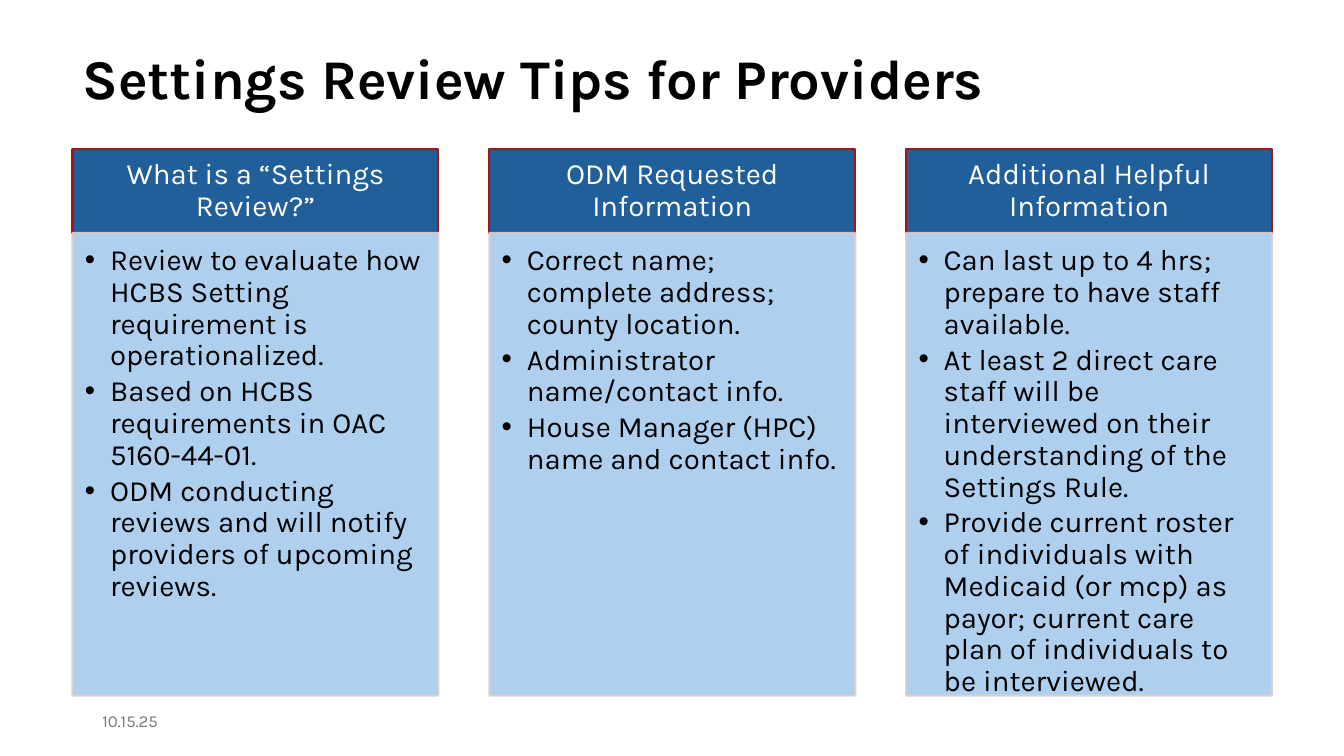
from dataclasses import dataclass

from lxml import etree
from pptx import Presentation
from pptx.dml.color import RGBColor
from pptx.enum import shapes, text
from pptx.oxml import ns
from pptx.util import Pt

FONT = "Karla"
COLOURS = {
    "header": "215F9A",
    "header_line": "991A1E",
    "body": "A6CAEC",
    "body_line": "DECDCD",
    "white": "FFFFFF",
    "black": "000000",
    "date": "797979",
}

# Column grid, in points
LEFT, TOP = 51.84, 106.56
COLUMN_WIDTH, COLUMN_PITCH = 261.36, 297.72
HEADER_HEIGHT, BODY_HEIGHT = 59.76, 330.48
INDENT = 18


@dataclass
class Column:
    heading: str
    tips: list[str]


COLUMNS = [
    Column("What is a “Settings Review?”", [
        "Review to evaluate how HCBS Setting requirement is operationalized.",
        "Based on HCBS requirements in OAC 5160-44-01.",
        "ODM conducting reviews and will notify providers of upcoming reviews.",
    ]),
    Column("ODM Requested Information", [
        "Correct name; complete address; county location.",
        "Administrator name/contact info.",
        "House Manager (HPC) name and contact info.",
    ]),
    Column("Additional Helpful Information", [
        "Can last up to 4 hrs; prepare to have staff available.",
        "At least 2 direct care staff will be interviewed on their "
        "understanding of the Settings Rule.",
        "Provide current roster of individuals with Medicaid (or mcp) as payor; "
        "current care plan of individuals to be interviewed.",
    ]),
]


def colour(name: str) -> RGBColor:
    return RGBColor.from_string(COLOURS[name])


def set_font(paragraph, size: float, name: str, bold: bool = False) -> None:
    font = paragraph.font
    font.name, font.size, font.bold = FONT, Pt(size), bold
    font.color.rgb = colour(name)


def set_frame(frame, anchor, margins: tuple[float, float, float, float]) -> None:
    frame.word_wrap = True
    frame.vertical_anchor = anchor
    (frame.margin_left, frame.margin_top,
     frame.margin_right, frame.margin_bottom) = map(Pt, margins)


def add_panel(slide, left: float, top: float, height: float, fill: str):
    shape = slide.shapes.add_shape(
        shapes.MSO_SHAPE.RECTANGLE, Pt(left), Pt(top), Pt(COLUMN_WIDTH), Pt(height))
    shape.shadow.inherit = False
    shape.fill.solid()
    shape.fill.fore_color.rgb = colour(fill)
    shape.line.color.rgb = colour(f"{fill}_line")
    shape.line.width = Pt(1.5)
    return shape


def set_opacity(shape, percent: int) -> None:
    for element in shape._element.spPr.iter(ns.qn("a:srgbClr")):
        etree.SubElement(element, ns.qn("a:alpha"), val=str(percent * 1000))


def add_bullet(paragraph) -> None:
    properties = paragraph._p.get_or_add_pPr()
    properties.set("marL", str(Pt(INDENT)))
    properties.set("indent", str(-Pt(INDENT)))
    etree.SubElement(properties, ns.qn("a:buFont"), typeface="Arial")
    etree.SubElement(properties, ns.qn("a:buChar"), char="•")


def add_column(slide, column: Column, left: float) -> None:
    # Heading
    header = add_panel(slide, left, TOP, HEADER_HEIGHT, "header")
    set_frame(header.text_frame, text.MSO_ANCHOR.MIDDLE, (11.76, 6.72, 11.76, 6.72))
    paragraph = header.text_frame.paragraphs[0]
    paragraph.text = column.heading
    paragraph.alignment = text.PP_ALIGN.CENTER
    paragraph.line_spacing = 0.9
    set_font(paragraph, 21, "white")

    # Bulleted tips
    body = add_panel(slide, left, TOP + HEADER_HEIGHT, BODY_HEIGHT, "body")
    set_opacity(body, 90)
    frame = body.text_frame
    set_frame(frame, text.MSO_ANCHOR.TOP, (8.82, 8.82, 11.76, 13.23))
    for index, tip in enumerate(column.tips):
        paragraph = frame.add_paragraph() if index else frame.paragraphs[0]
        paragraph.text = tip
        add_bullet(paragraph)
        paragraph.alignment = text.PP_ALIGN.LEFT
        paragraph.line_spacing = 0.9
        paragraph.space_after = Pt(3)
        set_font(paragraph, 21, "black")


def add_label(slide, words: str, box: tuple[float, float, float, float],
              anchor, size: float, name: str, bold: bool = False) -> None:
    label = slide.shapes.add_textbox(*map(Pt, box))
    set_frame(label.text_frame, anchor, (7.2, 3.6, 7.2, 3.6))
    paragraph = label.text_frame.paragraphs[0]
    paragraph.text = words
    set_font(paragraph, size, name, bold)


def main() -> None:
    presentation = Presentation()
    presentation.slide_width, presentation.slide_height = Pt(960), Pt(540)
    slide = presentation.slides.add_slide(presentation.slide_layouts[6])

    # Date
    add_label(slide, "10.15.25", (66, 500.5, 216, 28.75),
              text.MSO_ANCHOR.MIDDLE, 12, "date")

    # Columns
    for index, column in enumerate(COLUMNS):
        add_column(slide, column, LEFT + index * COLUMN_PITCH)

    # Title
    add_label(slide, "Settings Review Tips for Providers", (LEFT, 27.36, 856.8, 104.4),
              text.MSO_ANCHOR.TOP, 40, "black", bold=True)

    presentation.save("out.pptx")


if __name__ == "__main__":
    main()
